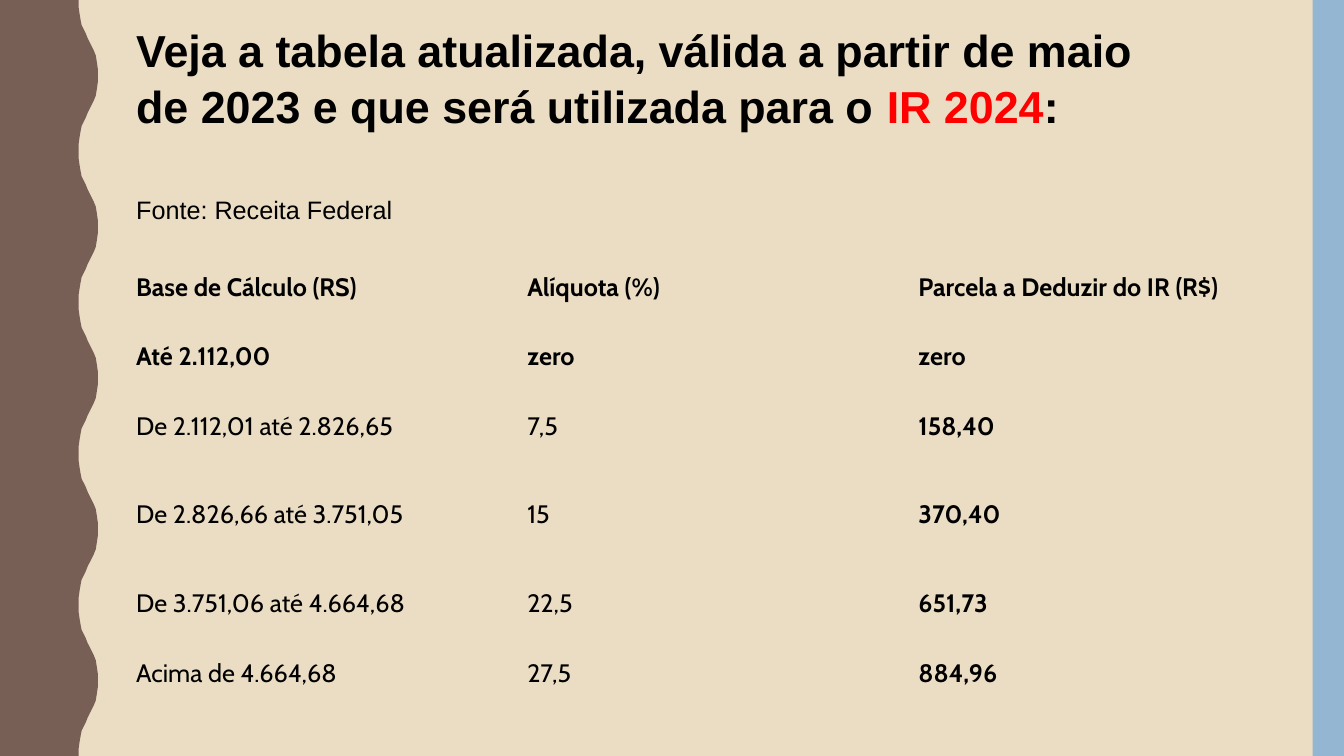
from dataclasses import dataclass

from pptx import Presentation
from pptx.dml.color import RGBColor
from pptx.enum.shapes import MSO_SHAPE
from pptx.enum.text import MSO_ANCHOR, MSO_AUTO_SIZE, PP_ALIGN
from pptx.oxml.ns import qn
from pptx.util import Emu, Inches, Pt

RECT = MSO_SHAPE.RECTANGLE
MIDDLE = MSO_ANCHOR.MIDDLE
LEFT = PP_ALIGN.LEFT
NO_FIT = MSO_AUTO_SIZE.NONE

SAND = RGBColor(0xEB, 0xDD, 0xC3)
BROWN = RGBColor(0x77, 0x5F, 0x55)
BLUE = RGBColor(0x94, 0xB6, 0xD2)
BLACK = RGBColor(0, 0, 0)
RED = RGBColor(0xFF, 0, 0)

SLIDE_W, SLIDE_H = Inches(13.33), Inches(7.5)
TITLE_FONT, TABLE_FONT = "Arial", "Cabin"
PLAIN_TABLE_STYLE = "{2D5ABB26-0587-4C30-8999-92F81FD0307C}"

WAVE_UNITS = 750
WAVE_PERIOD = 150
WAVE_COUNT = 5
WAVE_RISE = [(78, 0), (78, 7), (79, 14), (80, 20), (81, 25), (83, 29), (85, 33), (87, 38),
             (89, 42), (91, 46), (93, 50), (95, 55), (96, 61), (97, 68), (97, 75)]


@dataclass(frozen=True)
class Box:
    left: float
    top: float
    width: float
    height: float

    def emu(self) -> tuple[Emu, Emu, Emu, Emu]:
        return (share(self.left, SLIDE_W), share(self.top, SLIDE_H),
                share(self.width, SLIDE_W), share(self.height, SLIDE_H))


@dataclass(frozen=True)
class TaxRow:
    base: str
    rate: str
    deduction: str
    height: float
    bold: bool = False


TALL, SHORT = 11.73, 6.67
TITLE_BOX = Box(9.38, 2.27, 77.94, 27.87)
TABLE_BOX = Box(9.38, 32.13, 87.32, 60.26)
BAR_BOX = Box(97.67, 0, 2.33, 100)

TAX_ROWS = [
    TaxRow("Base de Cálculo (RS)", "Alíquota (%)", "Parcela a Deduzir do IR (R$)", TALL, True),
    TaxRow("Até 2.112,00", "zero", "zero", SHORT, True),
    TaxRow("De 2.112,01 até 2.826,65", "7,5", "158,40", TALL),
    TaxRow("De 2.826,66 até 3.751,05", "15", "370,40", TALL),
    TaxRow("De 3.751,06 até 4.664,68", "22,5", "651,73", TALL),
    TaxRow("Acima de 4.664,68", "27,5", "884,96", SHORT),
]


def share(percent: float, whole: int) -> Emu:
    return Emu(round(whole * percent / 100))


def add_text(p, text: str, *, font: str, size: float = 18,
             color: RGBColor = BLACK, bold: bool = False) -> None:
    r = p.add_run()
    r.text = text
    r.font.name = font
    r.font.size = Pt(size)
    r.font.bold = bold
    r.font.color.rgb = color


def paint(sp, color: RGBColor) -> None:
    sp.shadow.inherit = False
    sp.fill.solid()
    sp.fill.fore_color.rgb = color
    sp.line.fill.background()


def add_wave(s) -> None:
    fall = [(x, WAVE_PERIOD - y) for x, y in reversed(WAVE_RISE[1:-1])]
    edge = [(x, y + i * WAVE_PERIOD) for i in range(WAVE_COUNT) for x, y in WAVE_RISE + fall]
    builder = s.shapes.build_freeform(0, 0, scale=SLIDE_H / WAVE_UNITS)
    builder.add_line_segments(edge + [(WAVE_RISE[0][0], WAVE_UNITS), (0, WAVE_UNITS)])
    paint(builder.convert_to_shape(), BROWN)


def add_title(s) -> None:
    sp = s.shapes.title
    sp.left, sp.top, sp.width, sp.height = TITLE_BOX.emu()
    tf = sp.text_frame
    tf.word_wrap = True
    tf.auto_size = NO_FIT
    tf.vertical_anchor = MIDDLE
    heading, source = tf.paragraphs[0], tf.add_paragraph()
    for p in (heading, source):
        p.alignment = LEFT
        p.line_spacing = 1.05
    source.space_before = Pt(43)
    for text, color in (
        ("Veja a tabela atualizada, válida a partir de maio de 2023 "
         "e que será utilizada para o ", BLACK),
        ("IR 2024", RED),
        (":", BLACK),
    ):
        add_text(heading, text, font=TITLE_FONT, size=32, color=color, bold=True)
    add_text(source, "Fonte: Receita Federal", font=TITLE_FONT)


def add_tax_table(s) -> None:
    table = s.shapes.add_table(len(TAX_ROWS), 3, *TABLE_BOX.emu()).table
    table.first_row = table.horz_banding = False
    table._tbl.tblPr.find(qn("a:tableStyleId")).text = PLAIN_TABLE_STYLE
    for i, row in enumerate(TAX_ROWS):
        table.rows[i].height = share(row.height, SLIDE_H)
        for j, text in enumerate((row.base, row.rate, row.deduction)):
            cell = table.cell(i, j)
            cell.fill.background()
            cell.vertical_anchor = MIDDLE
            add_text(cell.text_frame.paragraphs[0], text, font=TABLE_FONT,
                     bold=row.bold or j == 2)


def main() -> None:
    prs = Presentation()
    prs.slide_width, prs.slide_height = SLIDE_W, SLIDE_H
    s = prs.slides.add_slide(prs.slide_layouts.get_by_name("Title Only"))
    s.background.fill.solid()
    s.background.fill.fore_color.rgb = SAND
    add_wave(s)
    paint(s.shapes.add_shape(RECT, *BAR_BOX.emu()), BLUE)
    add_tax_table(s)
    add_title(s)
    prs.save("out.pptx")


if __name__ == "__main__":
    main()
